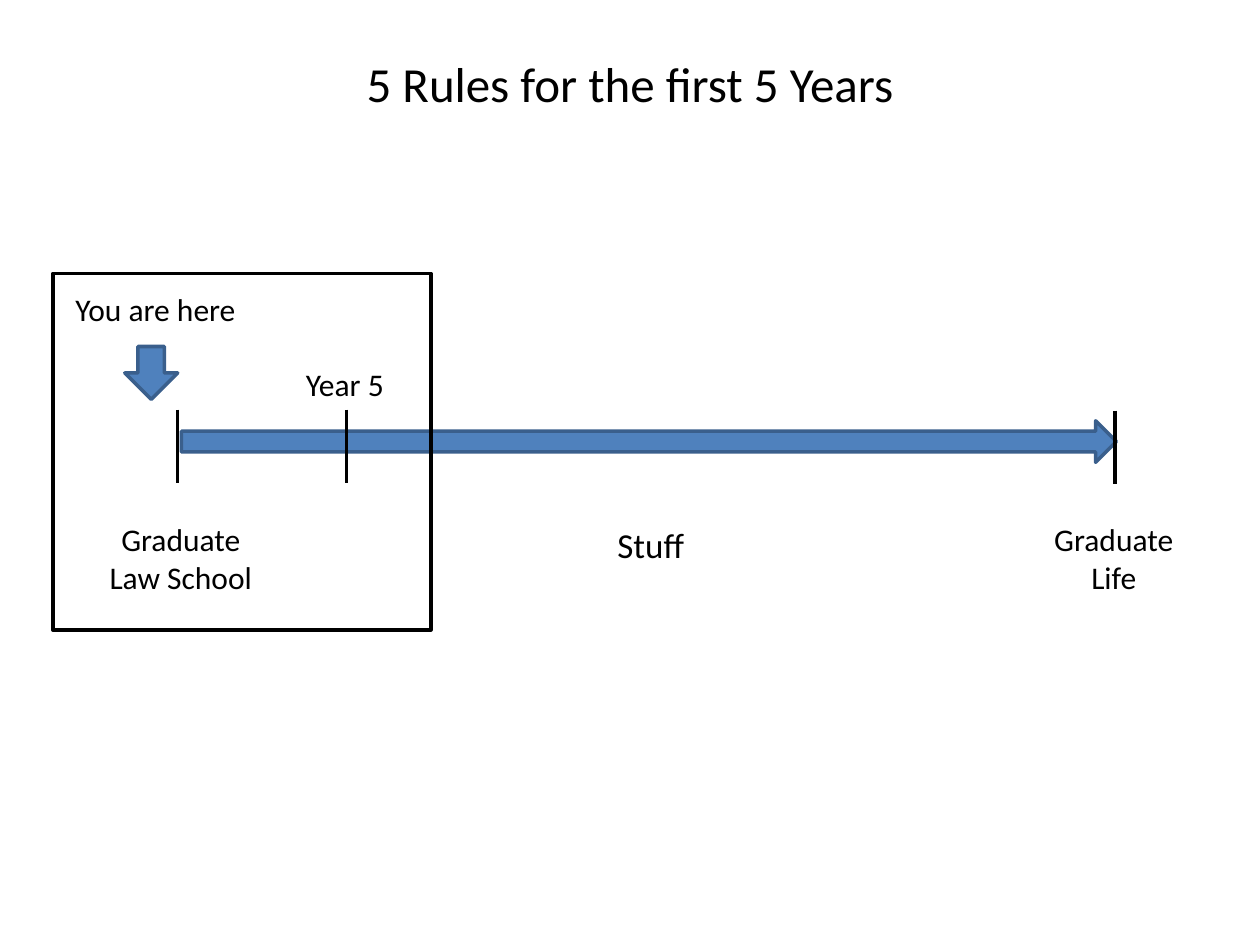
from dataclasses import dataclass

from lxml import etree
from pptx import Presentation
from pptx.dml.color import RGBColor
from pptx.enum import shapes, text
from pptx.oxml import ns
from pptx.util import Inches, Pt


@dataclass(frozen=True)
class Theme:
    font: str = "Calibri"
    ink: RGBColor = RGBColor(0, 0, 0)
    arrow_fill: RGBColor = RGBColor(0x4F, 0x81, 0xBD)
    arrow_line: RGBColor = RGBColor(0x3A, 0x5F, 0x8C)
    title_size: int = 28
    stuff_size: int = 20
    label_size: int = 18
    line_width: int = 2


THEME = Theme()


def write_text(frame, content, size=THEME.label_size, align=text.PP_ALIGN.CENTER,
               anchor=text.MSO_ANCHOR.TOP, wrap=True, fit=text.MSO_AUTO_SIZE.NONE):
    frame.word_wrap = wrap
    frame.auto_size = fit
    frame.vertical_anchor = anchor
    frame.text = content
    for paragraph in frame.paragraphs:
        paragraph.alignment = align
        paragraph.font.size = Pt(size)
        paragraph.font.name = THEME.font
        paragraph.font.color.rgb = THEME.ink


def add_label(slide, box, content, align=text.PP_ALIGN.CENTER):
    label = slide.shapes.add_textbox(*map(Inches, box))
    write_text(label.text_frame, content, align=align, wrap=False,
               fit=text.MSO_AUTO_SIZE.SHAPE_TO_FIT_TEXT)


def add_outlined(slide, kind, box, fill=None, line=THEME.ink):
    shape = slide.shapes.add_shape(kind, *map(Inches, box))
    shape.shadow.inherit = False
    if fill is None:
        shape.fill.background()
    else:
        shape.fill.solid()
        shape.fill.fore_color.rgb = fill
    shape.line.color.rgb = line
    shape.line.width = Pt(THEME.line_width)
    return shape


def add_block_arrow(slide, kind, box):
    return add_outlined(slide, kind, box, THEME.arrow_fill, THEME.arrow_line)


def add_tick(slide, x, top, height=0.58):
    tick = slide.shapes.add_connector(
        shapes.MSO_CONNECTOR.STRAIGHT,
        Inches(x), Inches(top), Inches(x), Inches(top + height))
    tick.line.color.rgb = THEME.ink
    tick.line.width = Pt(THEME.line_width)
    etree.SubElement(tick._element.spPr, ns.qn("a:effectLst"))


def place_title(slide, box):
    title = slide.shapes.title
    title.left, title.top, title.width, title.height = map(Inches, box)
    write_text(title.text_frame, "5 Rules for the first 5 Years",
               size=THEME.title_size, anchor=text.MSO_ANCHOR.MIDDLE)


def place_timeline(slide, box):
    left, top, width, height = box
    add_block_arrow(slide, shapes.MSO_SHAPE.RIGHT_ARROW, box)
    add_tick(slide, left - 0.03, top - 0.09)
    add_tick(slide, left + width - 0.01, top - 0.08)
    label_top = top + height + 0.41
    add_label(slide, (left - 0.68, label_top, 1.35, 0.71), "Graduate\nLaw School")
    add_label(slide, (left + width - 0.6, label_top, 1.16, 0.71), "Graduate\nLife")
    stuff = slide.shapes.add_textbox(
        *map(Inches, (left + 2.89, top + 0.4, 1.67, 1.17)))
    write_text(stuff.text_frame, "Stuff", size=THEME.stuff_size,
               anchor=text.MSO_ANCHOR.MIDDLE)


def place_first_years(slide, box):
    left, top, width, height = box
    add_block_arrow(slide, shapes.MSO_SHAPE.DOWN_ARROW,
                    (left + 0.57, top + 0.58, 0.42, 0.42))
    add_label(slide, (left + 0.08, top + 0.08, 1.49, 0.4), "You are here",
              align=text.PP_ALIGN.LEFT)
    add_tick(slide, left + 2.33, top + 1.08)
    add_label(slide, (left + 1.91, top + 0.68, 0.83, 0.4), "Year 5",
              align=text.PP_ALIGN.LEFT)
    add_outlined(slide, shapes.MSO_SHAPE.RECTANGLE, box)


def main():
    presentation = Presentation()
    presentation.slide_width = Inches(10)
    presentation.slide_height = Inches(7.5)
    slide = presentation.slides.add_slide(presentation.slide_layouts[5])
    place_timeline(slide, (1.44, 3.34, 7.42, 0.33))
    place_first_years(slide, (0.42, 2.17, 3, 2.83))
    place_title(slide, (2.25, 0.07, 5.5, 1.18))
    presentation.save("out.pptx")


if __name__ == "__main__":
    main()
